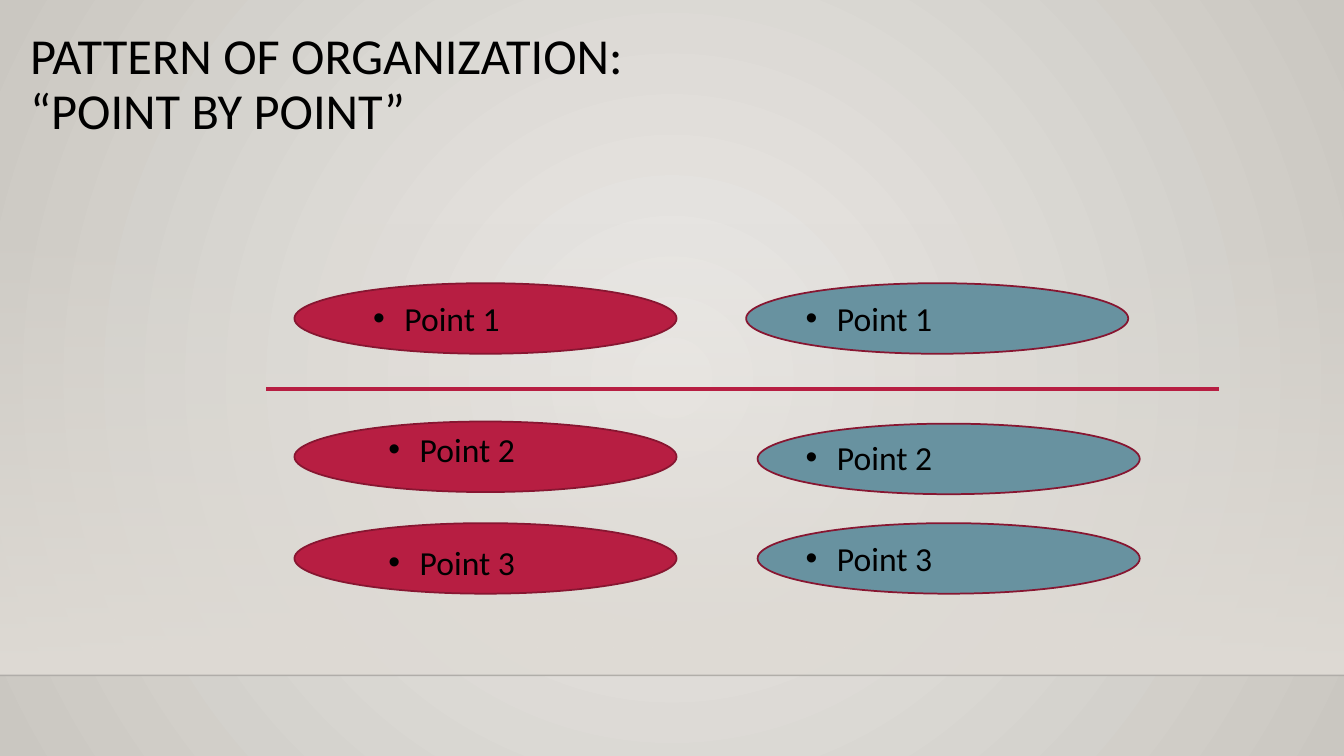
from lxml.etree import SubElement
from pptx import Presentation
from pptx.dml.color import RGBColor
from pptx.enum.shapes import MSO_CONNECTOR, MSO_SHAPE
from pptx.enum.text import MSO_ANCHOR
from pptx.oxml.ns import qn
from pptx.util import Inches, Pt

WIDE, HIGH = 13.33, 7.5
THEME = {
    "font": "Calibri", "title": 36, "label": 24, "ink": "000000",
    "red": "B71E42", "blue": "6892A0", "edge": "871631",
    "glow": "ECEAE7", "rim": "CAC7C1", "floor": "DFDBD5", "seam": "000001",
}
# Each point: oval (column share, row), label (column share, row)
LEFT = [((0, 0), (0.18, 0.14)), ((0, 1.96), (0.22, 1.99)), ((0, 3.4), (0.22, 3.59))]
RIGHT = [((0, 0), (0.13, 0.14)), ((0.03, 1.99), (0.13, 2.11)), ((0.03, 3.4), (0.13, 3.54))]
ROWS = 5


def tint(name):
    return RGBColor.from_string(THEME[name])


def inches(*sizes):
    return [Inches(size) for size in sizes]


def fade(node, share):
    """Set the opacity, in percent, of the first colour under node."""
    color = next(node.iter(qn("a:srgbClr")))
    SubElement(color, qn("a:alpha"), val=str(share * 1000))


def blend(fill, *names):
    fill.gradient()
    for stop, name, spot in zip(fill.gradient_stops, names, (0, 1)):
        stop.color.rgb = tint(name)
        stop.position = spot


def rule(slide, start, end, name, width):
    line = slide.shapes.add_connector(MSO_CONNECTOR.STRAIGHT, *inches(*start, *end))
    line.line.color.rgb = tint(name)
    line.line.width = Pt(width)
    SubElement(line._element.spPr, qn("a:effectLst"))
    return line


def write(slide, box, text, size, frame):
    area = slide.shapes.add_textbox(*inches(*box)).text_frame
    for key, value in {"word_wrap": True, **frame}.items():
        setattr(area, key, value)
    para = area.paragraphs[0]
    para.text = text
    for run in para.runs:
        style = {"name": THEME["font"], "size": Pt(THEME[size])}
        for key, value in style.items():
            setattr(run.font, key, value)
        run.font.color.rgb = tint("ink")
    return para


def backdrop(slide, box):
    """Round glow behind a floor that fades in down to a seam."""
    left, top, wide, high = box
    blend(slide.background.fill, "glow", "rim")
    grad = next(slide._element.iter(qn("a:gradFill")))
    grad.remove(grad.find(qn("a:lin")))
    ring = SubElement(grad, qn("a:path"), path="circle")
    SubElement(ring, qn("a:fillToRect"), {side: "50000" for side in "ltrb"})

    floor = slide.shapes.add_shape(MSO_SHAPE.RECTANGLE, *inches(*box))
    floor.shadow.inherit = False
    floor.line.fill.background()
    blend(floor.fill, "floor", "floor")
    floor.fill.gradient_angle = 270
    fade(floor._element.spPr, 0)
    seam = rule(slide, (left, top + high), (left + wide, top + high), "seam", 1)
    fade(seam._element.spPr, 20)


def heading(slide, box):
    frame = {"vertical_anchor": MSO_ANCHOR.BOTTOM, "margin_bottom": 0}
    para = write(slide, box, "PATTERN OF ORGANIZATION: \v“POINT BY POINT”", "title", frame)
    para.line_spacing = 0.9


def oval(slide, box, name):
    shape = slide.shapes.add_shape(MSO_SHAPE.OVAL, *inches(*box))
    shape.shadow.inherit = False
    shape.fill.solid()
    shape.fill.fore_color.rgb = tint(name)
    shape.line.color.rgb = tint("edge")
    shape.line.width = Pt(1.25)


def bullet(slide, box, text):
    props = write(slide, box, text, "label", {})._p.get_or_add_pPr()
    indent = Inches(0.31)
    props.set("marL", str(indent))
    props.set("indent", str(-indent))
    SubElement(props, qn("a:buFont"), typeface="Arial")
    SubElement(props, qn("a:buChar"), char="•")


def column(slide, box, name, points):
    """Ovals with bulleted labels, set by column share and row."""
    left, top, wide, high = box
    row = high / ROWS

    def place(spot, width, height):
        return left + spot[0] * wide, top + spot[1] * row, width * wide, height * row

    for number, (back, label) in enumerate(points, 1):
        oval(slide, place(back, 1, 1), name)
        bullet(slide, place(label, 0.57, 0.72), f"Point {number}")


def main():
    deck = Presentation()
    deck.slide_width, deck.slide_height = inches(WIDE, HIGH)
    slide = deck.slides.add_slide(deck.slide_layouts[6])
    backdrop(slide, (0, 2.21, WIDE, 4.49))
    rule(slide, (2.64, 3.86), (12.09, 3.86), "red", 2.5)
    heading(slide, (0.2, 0.2, 9.45, 1.19))
    column(slide, (2.92, 2.81, 3.79, 3.5), "red", LEFT)
    column(slide, (7.4, 2.81, 3.79, 3.5), "blue", RIGHT)
    deck.save("out.pptx")


if __name__ == "__main__":
    main()
